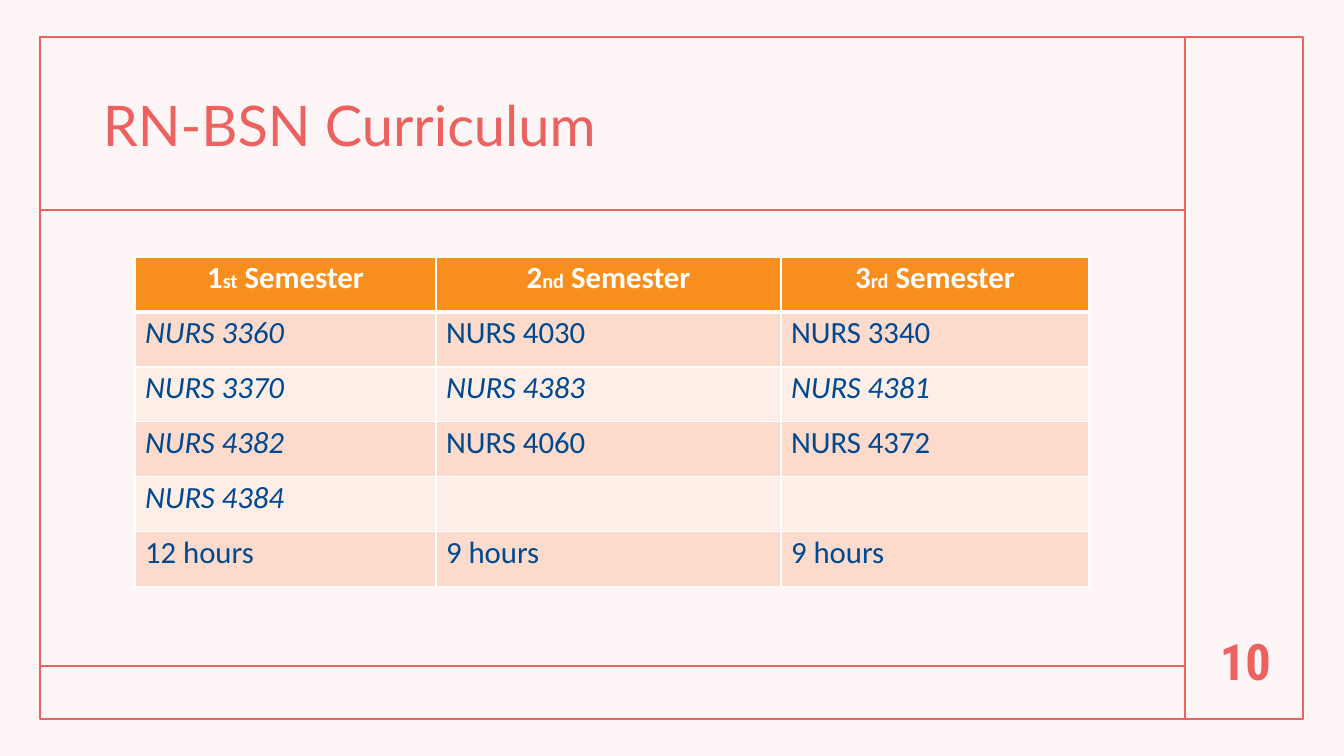
from lxml import etree
from pptx import Presentation
from pptx.dml.color import RGBColor
from pptx.enum.shapes import MSO_CONNECTOR, MSO_SHAPE
from pptx.enum.text import MSO_ANCHOR, PP_ALIGN
from pptx.oxml.ns import qn
from pptx.util import Emu, Pt

STRAIGHT = MSO_CONNECTOR.STRAIGHT
RECTANGLE = MSO_SHAPE.RECTANGLE
MIDDLE, TOP = MSO_ANCHOR.MIDDLE, MSO_ANCHOR.TOP
LEFT, CENTER = PP_ALIGN.LEFT, PP_ALIGN.CENTER
COLORS = {
    "background": "FEF6F6",
    "coral": "ED625F",
    "header": "F78E1E",
    "odd": "FCDBCC",
    "even": "FDEEE7",
    "navy": "004990",
    "white": "FFFFFF",
}
RGB = {name: RGBColor.from_string(value) for name, value in COLORS.items()}


def px(n):
    return Emu(round(n * 914400 / 100.8))


def add_label(text, box, font, size, bold, align, anchor, spacing):
    tf = s.shapes.add_textbox(*map(px, box)).text_frame
    tf.word_wrap = True
    tf.vertical_anchor = anchor
    p = tf.paragraphs[0]
    p.text = text
    p.alignment = align
    p.line_spacing = spacing
    p.font.name = font
    p.font.size = Pt(size)
    p.font.bold = bold
    p.font.color.rgb = RGB["coral"]


prs = Presentation()
prs.slide_width, prs.slide_height = px(1344), px(756)
s = prs.slides.add_slide(prs.slide_layouts[6])
s.background.fill.solid()
s.background.fill.fore_color.rgb = RGB["background"]

frame = s.shapes.add_shape(RECTANGLE, px(40), px(37), px(1263), px(682))
frame.shadow.inherit = False
frame.fill.background()
frame.line.color.rgb = RGB["coral"]
frame.line.width = Pt(1)

for ends in [(1185, 37, 1185, 719), (41, 210, 1185, 210), (41, 666, 1185, 666)]:
    rule = s.shapes.add_connector(STRAIGHT, *map(px, ends))
    rule.line.color.rgb = RGB["coral"]
    rule.line.width = Pt(1)
    etree.SubElement(rule._element.spPr, qn("a:effectLst"))

add_label("RN-BSN Curriculum", (93, 60, 1050, 137), "Lato", 40, False, LEFT, MIDDLE, 0.9)
add_label("10", (1193, 625, 105, 84), "Roboto Condensed", 36, True, CENTER, TOP, 1.0)

ordinals = [("1", "st"), ("2", "nd"), ("3", "rd")]
courses = [
    ["NURS 3360", "NURS 4030", "NURS 3340"],
    ["NURS 3370", "NURS 4383", "NURS 4381"],
    ["NURS 4382", "NURS 4060", "NURS 4372"],
    ["NURS 4384", "", ""],
    ["12 hours", "9 hours", "9 hours"],
]
italic_courses = {"NURS 3360", "NURS 3370", "NURS 4382", "NURS 4384", "NURS 4383", "NURS 4381"}
rows = [[[(number, 22), (suffix, 14.5), (" Semester", 22)] for number, suffix in ordinals]]
rows += [[[(course, 22)] if course else [] for course in row] for row in courses]

widths = [301, 345, 308]
row_height = 55
table = s.shapes.add_table(
    len(rows), len(widths), px(135), px(257), px(sum(widths)), px(row_height * len(rows))
).table
for column, width in zip(table.columns, widths):
    column.width = px(width)

for i, row in enumerate(rows):
    table.rows[i].height = px(row_height)
    is_header = i == 0
    fill = "header" if is_header else "odd" if i % 2 else "even"
    for j, parts in enumerate(row):
        cell = table.cell(i, j)
        tcPr = cell._tc.get_or_add_tcPr()
        for side in ("L", "R", "T", "B"):
            thick = (i, side) in [(0, "B"), (1, "T")]
            ln = etree.SubElement(tcPr, qn("a:ln" + side), w=str(Pt(2.85 if thick else 0.95)))
            solid = etree.SubElement(ln, qn("a:solidFill"))
            etree.SubElement(solid, qn("a:srgbClr"), val=COLORS["white"])
        cell.fill.solid()
        cell.fill.fore_color.rgb = RGB[fill]
        p = cell.text_frame.paragraphs[0]
        p.alignment = CENTER if is_header else LEFT
        p.line_spacing = Pt(24.8)
        p.font.name = "Calibri"
        p.font.bold = is_header
        p.font.color.rgb = RGB["white" if is_header else "navy"]
        for text, size in parts:
            r = p.add_run()
            r.text = text
            r.font.size = Pt(size)
            r.font.italic = text in italic_courses

prs.save("out.pptx")
